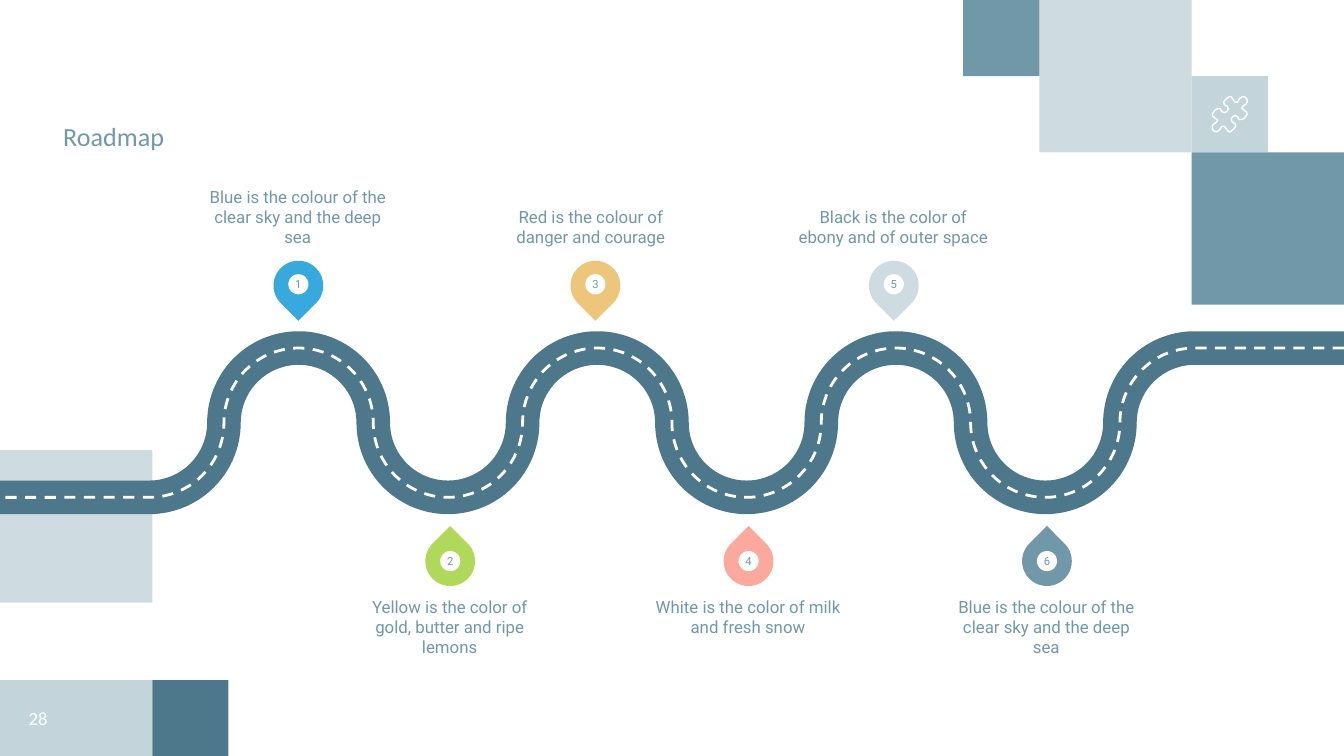
"""Build a roadmap slide with a winding road and six numbered pins."""
import math
from dataclasses import dataclass

from lxml import etree
from pptx import Presentation
from pptx import util as u
from pptx.dml.color import RGBColor
from pptx.enum import dml, shapes, text
from pptx.oxml import ns


@dataclass(frozen=True)
class Theme:
    """Colours, fonts and type sizes."""
    slate: str = "7198A9"
    deep: str = "4D778A"
    pale: str = "CEDBE0"
    white: str = "FFFFFF"
    blue: str = "37A9DD"
    gold: str = "EDC67B"
    lime: str = "B0D85B"
    coral: str = "FAA99C"
    head: str = "Calibri"
    body: str = "Roboto"
    title: int = 14
    page: int = 10
    label: int = 9
    pin: int = 6


T = Theme()
KIND = shapes.MSO_SHAPE
ANCHOR = text.MSO_ANCHOR
ALIGN = text.PP_ALIGN
UNIT = 17 / 30
SKY = "Blue is the colour of the clear sky and the deep sea"
STOPS = [
    (2.22, 1.51, True, T.blue, SKY),
    (3.35, 2.64, False, T.lime,
     "Yellow is the color of gold, butter and ripe lemons"),
    (4.43, 3.69, True, T.gold, "Red is the colour of danger and courage"),
    (5.57, 4.86, False, T.coral, "White is the color of milk and fresh snow"),
    (6.65, 5.94, True, T.pale,
     "Black is the color of ebony and of outer space"),
    (7.79, 7.08, False, T.slate, SKY),
]
PUZZLE = [
    (10, -6), (12, -7.5), (13, -9), (13, -11), (11.5, -12.8), (9, -13),
    (7, -11), (6, -9), (4, -9), (1, -13), (-0.5, -13), (-3, -11),
    (-4.5, -9), (-4, -7), (-2, -6), (-1, -4), (-2, -2), (-4, -1),
    (-6, -2), (-7, -4), (-9, -4), (-11, -3), (-13, 0), (-12.5, 1.5),
    (-9, 4.5),
]


def rgb(code):
    """Return a colour from its hex code."""
    return RGBColor.from_string(code)


def add(tree, kind, box, fill, alpha=None):
    """Add a flat preset shape, optionally see-through."""
    shape = tree.add_shape(kind, *map(u.Inches, box))
    shape.shadow.inherit = False
    shape.fill.solid()
    shape.fill.fore_color.rgb = rgb(fill)
    shape.line.fill.background()
    if alpha:
        node = shape.fill._xPr.find(".//" + ns.qn("a:srgbClr"))
        etree.SubElement(node, ns.qn("a:alpha"), val=str(alpha * 1000))
    return shape


def trace(tree, points, color, width, closed=False):
    """Add an unfilled outline through points given in inches."""
    spots = [(u.Inches(x), u.Inches(y)) for x, y in points]
    pen = tree.build_freeform(*spots[0])
    pen.add_line_segments(spots[1:], close=closed)
    shape = pen.convert_to_shape()
    shape.shadow.inherit = False
    shape.fill.background()
    shape.line.color.rgb = rgb(color)
    shape.line.width = u.Pt(width)
    return shape


def write(shape, words, size, font, color, anchor, align=ALIGN.CENTER,
          wrap=True, inset=0):
    """Fill a shape with one formatted paragraph."""
    frame = shape.text_frame
    frame.text = words
    frame.auto_size = text.MSO_AUTO_SIZE.NONE
    frame.word_wrap = wrap
    frame.vertical_anchor = anchor
    frame.margin_left = frame.margin_right = u.Inches(inset)
    frame.margin_top = frame.margin_bottom = u.Inches(inset)
    para = frame.paragraphs[0]
    para.alignment = align
    para.font.size = u.Pt(size)
    para.font.name = font
    para.font.color.rgb = rgb(color)


def corner(tree, left, top):
    """Place the upper right blocks and puzzle piece."""
    blocks = [(3, 2, 2, T.slate, None), (3, 1, 1, T.slate, 41),
              (1, 0, 2, T.pale, None), (0, 0, 1, T.slate, None)]
    for col, row, size, fill, alpha in blocks:
        box = (left + col * UNIT, top + row * UNIT, size * UNIT, size * UNIT)
        add(tree, KIND.RECTANGLE, box, fill, alpha)
    mid, base = left + 3.5 * UNIT, top + 1.5 * UNIT
    edge = PUZZLE + [(-x, -y) for x, y in PUZZLE]
    points = [(mid + x / 100, base + y / 100) for x, y in edge]
    trace(tree, points, T.white, 0.75, True)


def footer(tree, left, top):
    """Place the lower left blocks and page number."""
    add(tree, KIND.RECTANGLE, (left, top, 2 * UNIT, 2 * UNIT), T.pale)
    low = top + 3 * UNIT + 0.01
    add(tree, KIND.RECTANGLE, (left + 2 * UNIT, low, UNIT, UNIT), T.deep)
    add(tree, KIND.RECTANGLE, (left, low, 2 * UNIT, UNIT), T.slate, 41)
    page = tree.add_textbox(*map(u.Inches, (left, low, UNIT, UNIT)))
    write(page, "28", T.page, T.head, T.white, ANCHOR.MIDDLE, inset=0.1)


def road(tree, left, top, width):
    """Draw the winding road and its dashed centre line."""
    step = width / 9
    turn = step / 2
    points = [(left, top + step)]
    for bend in range(1, 9):
        side = 1 if bend % 2 else -1
        first, last = (90 if bend == 1 else 180), (90 if bend == 8 else 0)
        for deg in range(first, last - 1, -3):
            arc = math.radians(deg)
            points.append((left + bend * step + turn * math.cos(arc),
                           top + turn + side * turn * math.sin(arc)))
    points.append((left + width, top))
    points.reverse()
    trace(tree, points, T.deep, 18)
    lane = trace(tree, points, T.white, 1.5)
    lane.line.dash_style = dml.MSO_LINE.DASH


def pin(tree, mid, top, up, fill, number):
    """Place a numbered pin that points at the road."""
    group = tree.add_group_shape().shapes
    size, dot = 0.37, 0.15
    drop = add(group, KIND.TEAR, (mid - size / 2, top, size, size), fill)
    drop.rotation = 135 if up else 315
    gap = 0.1 if up else 0.11
    disc = add(group, KIND.OVAL, (mid - dot / 2, top + gap, dot, dot), T.white)
    write(disc, str(number), T.pin, T.body, T.slate, ANCHOR.MIDDLE, wrap=False)


def stops(tree, top, low):
    """Place all pins and labels above and below the road."""
    for number, (mid, left, up, fill, words) in enumerate(STOPS, 1):
        pin(tree, mid, top + 0.68 if up else low, up, fill, number)
        head = top if up else low + 0.45
        label = tree.add_textbox(*map(u.Inches, (left, head, 1.41, 0.58)))
        write(label, words, T.label, T.body, T.slate,
              ANCHOR.BOTTOM if up else ANCHOR.TOP)


def heading(title, left, top, width, height):
    """Place and format the slide title."""
    title.left, title.top = u.Inches(left), u.Inches(top)
    title.width, title.height = u.Inches(width), u.Inches(height)
    write(title, "Roadmap", T.title, T.head, T.slate, ANCHOR.BOTTOM,
          ALIGN.LEFT)


def main():
    """Build and save the slide."""
    deck = Presentation()
    deck.slide_width, deck.slide_height = u.Inches(10), u.Inches(5.625)
    slide = deck.slides.add_slide(deck.slide_layouts[5])
    tree = slide.shapes
    heading(tree.title, 0.47, 0.72, 4.5, 0.41)
    corner(tree, 10 - 5 * UNIT, 0)
    footer(tree, 0, 3.35)
    road(tree, 0, 2.59, 10)
    stops(tree, 1.26, 3.99)
    deck.save("out.pptx")


if __name__ == "__main__":
    main()
